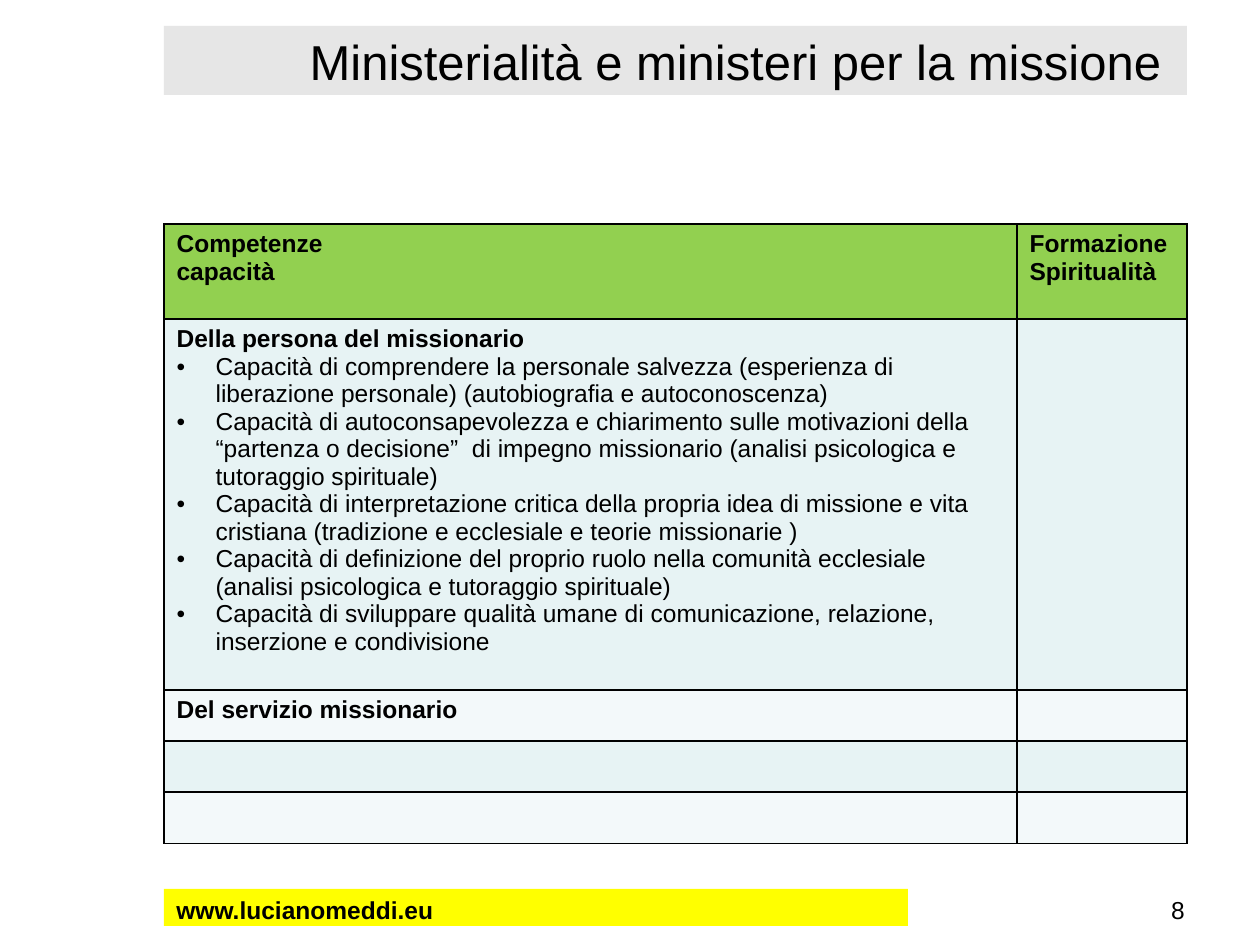
from dataclasses import dataclass

from lxml import etree
from pptx import Presentation
from pptx.dml.color import RGBColor
from pptx.enum.shapes import MSO_SHAPE
from pptx.enum.text import MSO_ANCHOR, MSO_AUTO_SIZE, PP_ALIGN
from pptx.oxml.ns import qn
from pptx.util import Emu, Pt

EMU_PER_PX = 914400 / 126
BLACK = RGBColor(0x00, 0x00, 0x00)
GREEN = RGBColor(0x92, 0xD0, 0x50)
BAND_DARK = RGBColor(0xE7, 0xF3, 0xF4)
BAND_LIGHT = RGBColor(0xF3, 0xF9, 0xFA)
YELLOW = RGBColor(0xFF, 0xFF, 0x00)
GREY = RGBColor(0xE6, 0xE6, 0xE6)
LEFT, RIGHT = PP_ALIGN.LEFT, PP_ALIGN.RIGHT
TOP, MIDDLE = MSO_ANCHOR.TOP, MSO_ANCHOR.MIDDLE
NO_AUTOFIT = MSO_AUTO_SIZE.NONE
RECTANGLE = MSO_SHAPE.RECTANGLE
FONT = "Arial"
BULLET_INDENT = 39
BORDER_SIDES = ("a:lnL", "a:lnR", "a:lnT", "a:lnB")


@dataclass(frozen=True)
class Box:
    left: int
    top: int
    width: int
    height: int

    def emu(self) -> tuple:
        return tuple(px(v) for v in (self.left, self.top, self.width, self.height))


@dataclass(frozen=True)
class Line:
    text: str
    bold: bool = False
    bullet: bool = False


@dataclass(frozen=True)
class Row:
    height: int
    fill: RGBColor
    cells: tuple = ((), ())


TITLE_BOX = Box(164, 26, 1023, 69)
TABLE_BOX = Box(164, 224, 1023, 619)
SITE_BOX = Box(164, 889, 744, 37)
NUMBER_BOX = Box(1027, 889, 170, 37)
COLUMN_WIDTHS = (853, 170)

ROWS = (
    Row(95, GREEN, (
        (Line("Competenze", bold=True), Line("capacità", bold=True)),
        (Line("Formazione", bold=True), Line("Spiritualità", bold=True)),
    )),
    Row(371, BAND_DARK, (
        (
            Line("Della persona del missionario", bold=True),
            Line("Capacità di comprendere la personale salvezza (esperienza di "
                 "liberazione personale) (autobiografia e autoconoscenza)", bullet=True),
            Line("Capacità di autoconsapevolezza e chiarimento sulle motivazioni della "
                 "“partenza o decisione”  di impegno missionario (analisi psicologica e "
                 "tutoraggio spirituale)", bullet=True),
            Line("Capacità di interpretazione critica della propria idea di missione e vita "
                 "cristiana (tradizione e ecclesiale e teorie missionarie )", bullet=True),
            Line("Capacità di definizione del proprio ruolo nella comunità ecclesiale "
                 "(analisi psicologica e tutoraggio spirituale)", bullet=True),
            Line("Capacità di sviluppare qualità umane di comunicazione, relazione, "
                 "inserzione e condivisione", bullet=True),
        ),
        (),
    )),
    Row(51, BAND_LIGHT, ((Line("Del servizio missionario", bold=True),), ())),
    Row(51, BAND_DARK),
    Row(51, BAND_LIGHT),
)


def px(value: int) -> Emu:
    return Emu(round(value * EMU_PER_PX))


def write(frame, lines: tuple, *, size: int = 14, align=LEFT) -> None:
    frame.word_wrap = True
    for index, line in enumerate(lines):
        para = frame.add_paragraph() if index else frame.paragraphs[0]
        para.alignment = align
        if line.bullet:
            add_bullet(para)
        span = para.add_run()
        span.text = line.text
        span.font.name = FONT
        span.font.size = Pt(size)
        span.font.bold = line.bold
        span.font.color.rgb = BLACK


def add_bullet(para) -> None:
    properties = para._p.get_or_add_pPr()
    properties.set("marL", str(px(BULLET_INDENT)))
    properties.set("indent", str(-px(BULLET_INDENT)))
    etree.SubElement(properties, qn("a:buFont"), typeface=FONT)
    etree.SubElement(properties, qn("a:buChar"), char="•")


def add_borders(cell) -> None:
    properties = cell._tc.get_or_add_tcPr()
    for index, side in enumerate(BORDER_SIDES):
        border = etree.Element(qn(side), w=str(Pt(1)))
        fill = etree.SubElement(border, qn("a:solidFill"))
        etree.SubElement(fill, qn("a:srgbClr"), val=str(BLACK))
        properties.insert(index, border)


def add_title(slide) -> None:
    title = slide.shapes.title
    title.left, title.top, title.width, title.height = TITLE_BOX.emu()
    title.fill.solid()
    title.fill.fore_color.rgb = GREY
    frame = title.text_frame
    frame.auto_size = NO_AUTOFIT
    frame.vertical_anchor = MIDDLE
    write(frame, (Line("Ministerialità e ministeri per la missione "),), size=28, align=RIGHT)


def add_skills_table(slide) -> None:
    table = slide.shapes.add_table(len(ROWS), len(COLUMN_WIDTHS), *TABLE_BOX.emu()).table
    for column, width in zip(table.columns, COLUMN_WIDTHS):
        column.width = px(width)
    for table_row, row in zip(table.rows, ROWS):
        table_row.height = px(row.height)
        for cell, lines in zip(table_row.cells, row.cells):
            cell.fill.solid()
            cell.fill.fore_color.rgb = row.fill
            add_borders(cell)
            write(cell.text_frame, lines)


def add_footer(slide) -> None:
    site = slide.shapes.add_shape(RECTANGLE, *SITE_BOX.emu())
    site.shadow.inherit = False
    site.fill.solid()
    site.fill.fore_color.rgb = YELLOW
    site.line.fill.background()
    site.text_frame.vertical_anchor = TOP
    write(site.text_frame, (Line("www.lucianomeddi.eu", bold=True),))
    number = slide.shapes.add_textbox(*NUMBER_BOX.emu())
    write(number.text_frame, (Line("8"),), align=RIGHT)


def main() -> None:
    deck = Presentation()
    deck.slide_width, deck.slide_height = px(1260), px(945)
    page = deck.slides.add_slide(deck.slide_layouts[5])
    add_title(page)
    add_skills_table(page)
    add_footer(page)
    deck.save("out.pptx")


if __name__ == "__main__":
    main()
